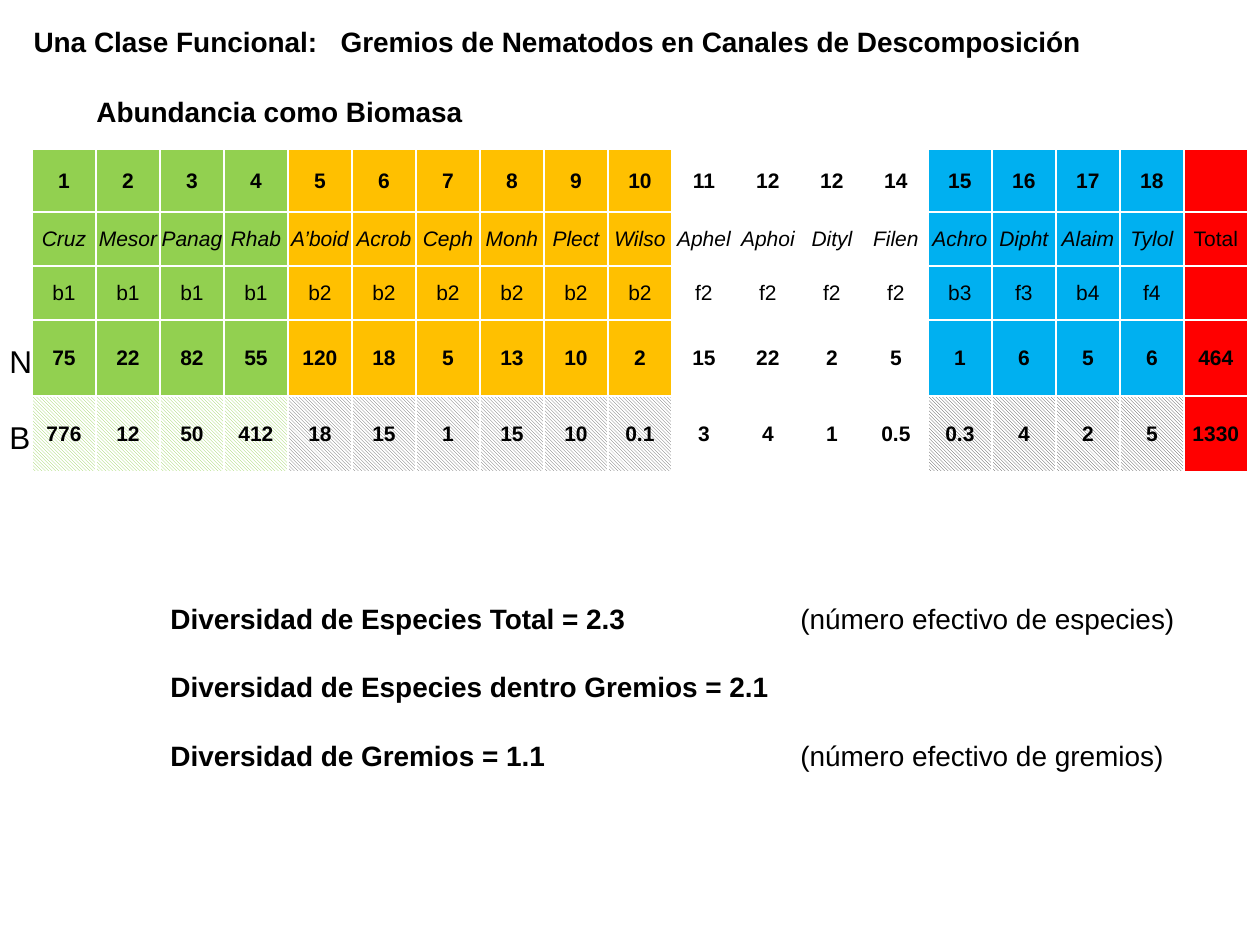
from pptx import Presentation
from pptx.dml.color import RGBColor
from pptx.enum.dml import MSO_PATTERN
from pptx.enum.text import MSO_ANCHOR, MSO_AUTO_SIZE, PP_ALIGN
from pptx.oxml import parse_xml
from pptx.oxml.ns import nsdecls
from pptx.util import Pt

PX = 914400 / 126


def rgb(value):
    return RGBColor.from_string(value)


def write(p, text, size=16, bold=False, italic=False, align=PP_ALIGN.LEFT, tab=None):
    p.alignment = align
    if tab:
        p._p.get_or_add_pPr().append(parse_xml(
            f'<a:tabLst {nsdecls("a")}><a:tab pos="{round(tab * PX)}" algn="l"/></a:tabLst>'))
    r = p.add_run()
    r.text = text
    r.font.name, r.font.size = "Arial", Pt(size)
    r.font.bold, r.font.italic = bold, italic
    r.font.color.rgb = rgb("000000")


prs = Presentation()
prs.slide_width, prs.slide_height = round(1260 * PX), round(945 * PX)
s = prs.slides.add_slide(prs.slide_layouts[5])

title = s.shapes.title
title.left, title.top, title.width, title.height = [round(v * PX) for v in (21, 18, 1086, 47)]
tf = title.text_frame
tf.word_wrap = False
tf.auto_size = MSO_AUTO_SIZE.NONE
tf.vertical_anchor = MSO_ANCHOR.TOP
write(tf.paragraphs[0],
      "Una Clase Funcional:\tGremios de Nematodos en Canales de Descomposición",
      bold=True, tab=307)

rows = [
    "1 2 3 4 5 6 7 8 9 10 11 12 12 14 15 16 17 18".split() + [""],
    "Cruz Mesor Panag Rhab A’boid Acrob Ceph Monh Plect Wilso "
    "Aphel Aphoi Dityl Filen Achro Dipht Alaim Tylol Total".split(),
    ["b1"] * 4 + ["b2"] * 6 + ["f2"] * 4 + ["b3", "f3", "b4", "f4", ""],
    "75 22 82 55 120 18 5 13 10 2 15 22 2 5 1 6 5 6 464".split(),
    "776 12 50 412 18 15 1 15 10 0.1 3 4 1 0.5 0.3 4 2 5 1330".split(),
]
heights = [63, 54, 54, 76, 76]
fills = ["92D050"] * 4 + ["FFC000"] * 6 + ["FFFFFF"] * 4 + ["00B0F0"] * 4 + ["FF0000"]
hatches = ["92D050"] * 4 + ["606060"] * 6 + ["FFFFFF"] * 4 + ["404040"] * 4
total = len(fills) - 1

frame = s.shapes.add_table(len(rows), len(fills), round(32 * PX), round(149 * PX),
                           round(64 * len(fills) * PX), round(sum(heights) * PX))
table = frame.table
table.first_row = table.horz_banding = False
for col in table.columns:
    col.width = round(64 * PX)
for i, (values, height) in enumerate(zip(rows, heights)):
    table.rows[i].height = round(height * PX)
    for j, value in enumerate(values):
        cell = table.cell(i, j)
        cell.vertical_anchor = MSO_ANCHOR.MIDDLE
        cell.margin_left = cell.margin_right = cell.margin_top = round(PX)
        cell.margin_bottom = 0
        for side in "LRTB":
            cell._tc.get_or_add_tcPr().append(parse_xml(
                f'<a:ln{side} {nsdecls("a")} w="12700"><a:solidFill>'
                f'<a:srgbClr val="FFFFFF"/></a:solidFill></a:ln{side}>'))
        if i == 4 and j < total:
            cell.fill.patterned()
            cell.fill.pattern = MSO_PATTERN.LIGHT_DOWNWARD_DIAGONAL
            cell.fill.fore_color.rgb = rgb(hatches[j])
            cell.fill.back_color.rgb = rgb("FFFFFF")
        else:
            cell.fill.solid()
            cell.fill.fore_color.rgb = rgb(fills[j])
        if value:
            write(cell.text_frame.paragraphs[0], value, size=12, bold=i in (0, 3, 4),
                  italic=i == 1 and j < total, align=PP_ALIGN.CENTER)

labels = [
    ("Abundancia como Biomasa", 84, 88, 396, 47, 16, True),
    ("N", -3, 336, 45, 50, 18, False),
    ("B", -3, 412, 43, 50, 18, False),
]
for text, x, y, w, h, size, bold in labels:
    tb = s.shapes.add_textbox(*[round(v * PX) for v in (x, y, w, h)])
    tb.text_frame.word_wrap = False
    write(tb.text_frame.paragraphs[0], text, size=size, bold=bold)

results = [
    ("Diversidad de Especies Total = 2.3", "(número efectivo de especies)"),
    ("Diversidad de Especies dentro Gremios = 2.1", ""),
    ("Diversidad de Gremios = 1.1", "(número efectivo de gremios)"),
]
tb = s.shapes.add_textbox(*[round(v * PX) for v in (158, 595, 1041, 183)])
tf = tb.text_frame
tf.word_wrap = False
for i, (result, note) in enumerate(results):
    p = tf.add_paragraph() if i else tf.paragraphs[0]
    if i:
        p.space_before = Pt(20)
    write(p, result, bold=True, tab=630 if note else None)
    if note:
        write(p, "\t" + note)

prs.save("out.pptx")
